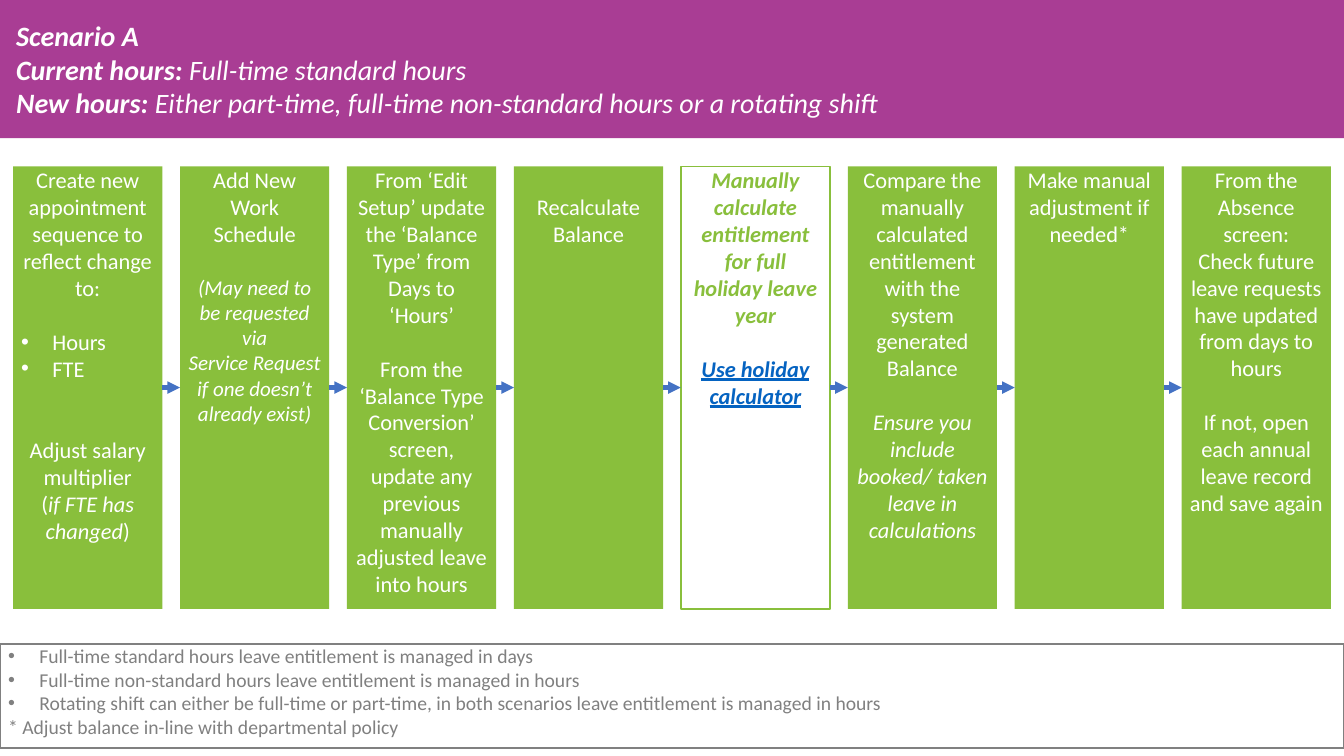
from itertools import pairwise

from lxml.etree import SubElement
from pptx import Presentation
from pptx.dml.color import RGBColor
from pptx.enum.shapes import MSO_CONNECTOR as Connector, MSO_SHAPE as Shape
from pptx.enum.text import MSO_ANCHOR as Anchor, MSO_AUTO_SIZE as AutoSize, PP_ALIGN as Align
from pptx.oxml.ns import qn
from pptx.util import Inches, Pt

PURPLE = RGBColor(0xA9, 0x3D, 0x94)
GREEN = RGBColor(0x89, 0xBF, 0x3C)
BLUE = RGBColor(0x44, 0x72, 0xC4)
LINK = RGBColor(0x05, 0x63, 0xC1)
GREY = RGBColor(0x80, 0x80, 0x80)
WHITE = RGBColor(0xFF, 0xFF, 0xFF)

LINE_GAP = 19.5
BOLD = {"bold": True}
ITALIC = {"italic": True}
SMALL = {"italic": True, "size": Pt(15)}
CALCULATOR = {"color": LINK, "underline": True}


def para(*runs, gap=0, bullet=False, align=Align.CENTER):
    return {"runs": runs, "gap": gap, "bullet": bullet, "align": align}


SCENARIO = [
    para(("Scenario A", BOLD), align=Align.LEFT),
    para(("Current hours: ", BOLD), ("Full-time standard hours", {}), align=Align.LEFT),
    para(("New hours: ", BOLD),
         ("Either part-time, full-time non-standard hours or a rotating shift", {}),
         align=Align.LEFT),
]

NOTES = [
    para(("Full-time standard hours leave entitlement is managed in days", {}),
         bullet=True, align=Align.LEFT),
    para(("Full-time non-standard hours leave entitlement is managed in hours", {}),
         bullet=True, align=Align.LEFT),
    para(("Rotating shift can either be full-time or part-time, in both scenarios "
          "leave entitlement is managed in hours", {}), bullet=True, align=Align.LEFT),
    para(("* Adjust balance in-line with departmental policy", {}), align=Align.LEFT),
]

STEPS = [
    {"paragraphs": [
        para(("Create new appointment sequence to reflect change to:", {})),
        para(("Hours", {}), gap=LINE_GAP, bullet=True, align=Align.LEFT),
        para(("FTE", {}), bullet=True, align=Align.LEFT),
        para(("Adjust salary multiplier", {}), gap=2 * LINE_GAP),
        para(("(", {}), ("if FTE has changed", ITALIC), (")", {}))]},
    {"paragraphs": [
        para(("Add New Work Schedule", {})),
        para(("(May need to be requested via", SMALL), gap=LINE_GAP),
        para(("Service Request if one doesn’t already exist)", SMALL))]},
    {"paragraphs": [
        para(("From ‘Edit Setup’ update the ‘Balance Type’ from Days to ‘Hours’", {})),
        para(("From the ‘Balance Type Conversion’ screen, update any previous "
              "manually adjusted leave into hours", {}), gap=LINE_GAP)]},
    {"paragraphs": [para(("Recalculate Balance", {}))], "top_inset": 0.27},
    {"paragraphs": [
        para(("Manually calculate entitlement for full holiday leave year", {})),
        para(("Use holiday calculator", CALCULATOR), gap=LINE_GAP)],
     "outlined": True},
    {"paragraphs": [
        para(("Compare the manually calculated entitlement with the system "
              "generated Balance", {})),
        para(("Ensure you include booked/ taken leave in calculations", ITALIC),
             gap=LINE_GAP)]},
    {"paragraphs": [para(("Make manual adjustment if needed*", {}))]},
    {"paragraphs": [
        para(("From the Absence screen:", {})),
        para(("Check future leave requests have updated from days to hours", {})),
        para(("If not, open each annual leave record and save again", {}), gap=LINE_GAP)]},
]


class ScenarioSlide:
    font = "Calibri"

    def __init__(self, deck):
        self.slide = deck.slides.add_slide(deck.slide_layouts[1])

    def place(self, shape, left, top, width, height):
        box = {"left": left, "top": top, "width": width, "height": height}
        for name, value in box.items():
            setattr(shape, name, Inches(value))

    def set_text(self, shape, paragraphs, style, insets, anchor=Anchor.TOP):
        frame = shape.text_frame
        left, top, right = insets
        layout = {"word_wrap": True, "auto_size": AutoSize.NONE, "vertical_anchor": anchor,
                  "margin_left": Inches(left), "margin_top": Inches(top),
                  "margin_right": Inches(right), "margin_bottom": 0}
        for name, value in layout.items():
            setattr(frame, name, value)
        for number, content in enumerate(paragraphs):
            paragraph = frame.add_paragraph() if number else frame.paragraphs[0]
            spacing = {"alignment": content["align"], "space_before": Pt(content["gap"]),
                       "space_after": Pt(0), "line_spacing": 1.0}
            for name, value in spacing.items():
                setattr(paragraph, name, value)
            self.mark(paragraph, content["bullet"])
            for text, changes in content["runs"]:
                run = paragraph.add_run()
                run.text = text
                look = {"name": self.font, "bold": False, "italic": False} | style | changes
                run.font.color.rgb = look.pop("color")
                for name, value in look.items():
                    setattr(run.font, name, value)

    def mark(self, paragraph, bullet):
        properties = paragraph._p.get_or_add_pPr()
        indent = Inches(0.31) if bullet else 0
        properties.set("marL", str(indent))
        properties.set("indent", str(-indent))
        if bullet:
            SubElement(properties, qn("a:buFont"), typeface="Arial")
            SubElement(properties, qn("a:buChar"), char="•")
        else:
            SubElement(properties, qn("a:buNone"))

    def banner(self, paragraphs):
        title = self.slide.shapes.title
        self.place(title, 0, 0, 13.33, 1.37)
        title.fill.solid()
        title.fill.fore_color.rgb = PURPLE
        style = {"size": Pt(20), "color": WHITE, "italic": True}
        self.set_text(title, paragraphs, style, (0.16, 0, 0), Anchor.MIDDLE)

    def notes(self, paragraphs):
        body = self.slide.placeholders[1]
        self.place(body, 0, 6.39, 13.33, 1.03)
        body.line.color.rgb = GREY
        body.line.width = Pt(1)
        self.set_text(body, paragraphs, {"size": Pt(14), "color": GREY}, (0.08, 0, 0.08))

    def step(self, left, paragraphs, top_inset=0, outlined=False):
        card = self.slide.shapes.add_shape(
            Shape.RECTANGLE, Inches(left), Inches(1.65), Inches(1.48), Inches(4.39))
        card.shadow.inherit = False
        style = {"size": Pt(16), "color": WHITE}
        if outlined:
            card.fill.background()
            card.line.color.rgb = GREEN
            card.line.width = Pt(1)
            style |= {"color": GREEN, "bold": True, "italic": True}
        else:
            card.fill.solid()
            card.fill.fore_color.rgb = GREEN
            card.line.fill.background()
        self.set_text(card, paragraphs, style, (0.08, top_inset, 0.08))
        return card

    def arrow(self, source, target):
        link = self.slide.shapes.add_connector(Connector.STRAIGHT, 0, 0, 0, 0)
        link.begin_connect(source, 3)
        link.end_connect(target, 1)
        link.line.color.rgb = BLUE
        link.line.width = Pt(3)
        SubElement(link.line._get_or_add_ln(), qn("a:tailEnd"), type="triangle")
        SubElement(link._element.spPr, qn("a:effectLst"))


def main():
    deck = Presentation()
    deck.slide_width = Inches(13.33)
    deck.slide_height = Inches(7.5)
    page = ScenarioSlide(deck)
    page.banner(SCENARIO)
    page.notes(NOTES)
    first, last = 0.13, 11.72
    pitch = (last - first) / (len(STEPS) - 1)
    cards = [page.step(first + pitch * number, **step) for number, step in enumerate(STEPS)]
    for source, target in pairwise(cards):
        page.arrow(source, target)
    deck.save("out.pptx")


if __name__ == "__main__":
    main()
